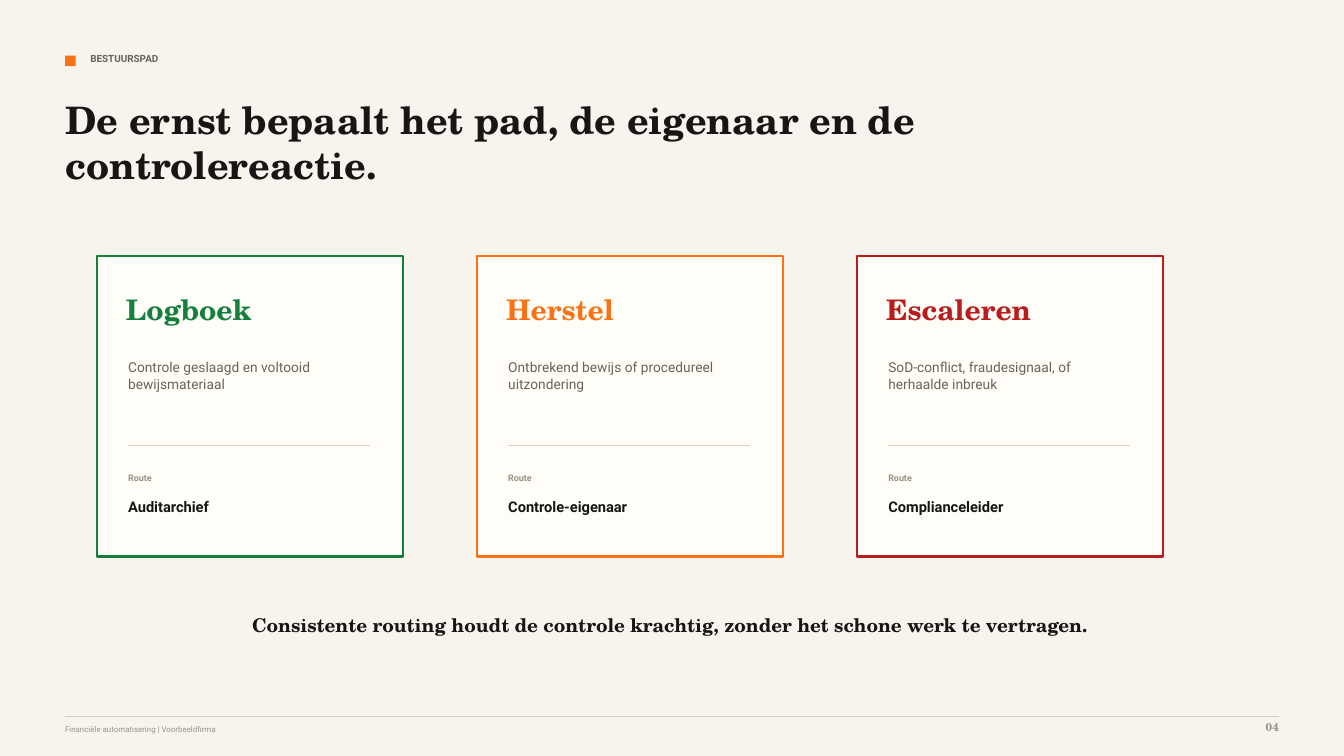
from dataclasses import dataclass

from pptx import Presentation
from pptx.dml.color import RGBColor
from pptx.enum.shapes import MSO_CONNECTOR, MSO_SHAPE
from pptx.enum.text import MSO_ANCHOR, MSO_AUTO_SIZE, PP_ALIGN
from pptx.oxml.ns import qn
from pptx.slide import Slide
from pptx.util import Emu, Pt
from lxml import etree

LEFT, CENTER, RIGHT = PP_ALIGN.LEFT, PP_ALIGN.CENTER, PP_ALIGN.RIGHT
TOP, NO_AUTOSIZE = MSO_ANCHOR.TOP, MSO_AUTO_SIZE.NONE
RECTANGLE, STRAIGHT = MSO_SHAPE.RECTANGLE, MSO_CONNECTOR.STRAIGHT
TITLE_ONLY = 5
EMU_PER_PX = 9525


@dataclass(frozen=True)
class Style:
    size: float
    font: str
    color: str
    bold: bool = True
    align: PP_ALIGN = LEFT


@dataclass(frozen=True)
class Theme:
    serif: str = "TeX Gyre Schola"
    sans: str = "Roboto"
    paper: str = "F7F4EE"
    card: str = "FFFDF8"
    ink: str = "171614"
    muted: str = "69635A"
    faint: str = "9A9184"
    rule: str = "D9D0C3"
    green: str = "15803D"
    orange: str = "F97316"
    red: str = "B91C1C"
    eyebrow_size: float = 7.1
    title_size: float = 27
    heading_size: float = 20.2
    body_size: float = 9.8
    label_size: float = 6.4
    route_size: float = 10.5
    takeaway_size: float = 13.5
    footer_size: float = 5.6
    page_size: float = 8.2


@dataclass(frozen=True)
class Box:
    left: int
    top: int
    width: int
    height: int

    def emu(self) -> tuple[Emu, Emu, Emu, Emu]:
        return px(self.left), px(self.top), px(self.width), px(self.height)


@dataclass(frozen=True)
class SeverityPath:
    heading: str
    condition: str
    route: str
    color: str


THEME = Theme()
EYEBROW = Style(THEME.eyebrow_size, THEME.sans, THEME.muted)
TITLE = Style(THEME.title_size, THEME.serif, THEME.ink)
BODY = Style(THEME.body_size, THEME.sans, THEME.muted, bold=False)
LABEL = Style(THEME.label_size, THEME.sans, THEME.faint)
ROUTE = Style(THEME.route_size, THEME.sans, THEME.ink)
TAKEAWAY = Style(THEME.takeaway_size, THEME.serif, THEME.ink, align=CENTER)
FOOTER = Style(THEME.footer_size, THEME.sans, THEME.faint, bold=False)
PAGE = Style(THEME.page_size, THEME.serif, THEME.faint, align=RIGHT)

MARGIN = 62
CARD_LEFT, CARD_TOP, CARD_WIDTH, CARD_HEIGHT = 92, 244, 292, 286
CARD_STEP = 362
CARD_PADDING = 30

PATHS = (
    SeverityPath("Logboek", "Controle geslaagd en voltooid\nbewijsmateriaal",
                 "Auditarchief", THEME.green),
    SeverityPath("Herstel", "Ontbrekend bewijs of procedureel\nuitzondering",
                 "Controle-eigenaar", THEME.orange),
    SeverityPath("Escaleren", "SoD-conflict, fraudesignaal, of\nherhaalde inbreuk",
                 "Complianceleider", THEME.red),
)


def px(length: int) -> Emu:
    return Emu(length * EMU_PER_PX)


def rgb(color: str) -> RGBColor:
    return RGBColor.from_string(color)


def write(shape, text: str, style: Style) -> None:
    frame = shape.text_frame
    frame_format = {
        "margin_left": 0, "margin_top": 0, "margin_right": 0, "margin_bottom": 0,
        "word_wrap": True, "auto_size": NO_AUTOSIZE, "vertical_anchor": TOP,
    }
    for name, value in frame_format.items():
        setattr(frame, name, value)
    frame.text = text
    font_format = {"size": Pt(style.size), "name": style.font, "bold": style.bold}
    for paragraph in frame.paragraphs:
        paragraph.alignment = style.align
        for run in paragraph.runs:
            for name, value in font_format.items():
                setattr(run.font, name, value)
            run.font.color.rgb = rgb(style.color)


def add_text(slide: Slide, box: Box, text: str, style: Style) -> None:
    write(slide.shapes.add_textbox(*box.emu()), text, style)


def add_title(slide: Slide, box: Box, text: str) -> None:
    title = slide.shapes.title
    title.left, title.top, title.width, title.height = box.emu()
    write(title, text, TITLE)


def add_block(slide: Slide, box: Box, fill: str, outline: str = "") -> None:
    block = slide.shapes.add_shape(RECTANGLE, *box.emu())
    block.shadow.inherit = False
    block.fill.solid()
    block.fill.fore_color.rgb = rgb(fill)
    if outline:
        block.line.color.rgb = rgb(outline)
        block.line.width = Pt(1.5)
    else:
        block.line.fill.background()


def add_rule(slide: Slide, left: int, top: int, width: int) -> None:
    rule = slide.shapes.add_connector(
        STRAIGHT, px(left), px(top), px(left + width), px(top))
    rule.line.color.rgb = rgb(THEME.rule)
    rule.line.width = Pt(0.75)
    etree.SubElement(rule._element.spPr, qn("a:effectLst"))


def add_card(slide: Slide, left: int, path: SeverityPath) -> None:
    inner = left + CARD_PADDING
    heading = Style(THEME.heading_size, THEME.serif, path.color)
    add_block(slide, Box(left, CARD_TOP, CARD_WIDTH, CARD_HEIGHT), THEME.card, path.color)
    add_text(slide, Box(inner - 2, 278, 220, 34), path.heading, heading)
    add_text(slide, Box(inner, 342, 224, 50), path.condition, BODY)
    add_rule(slide, inner, 424, 230)
    add_text(slide, Box(inner, 450, 160, 14), "Route", LABEL)
    add_text(slide, Box(inner, 474, 220, 22), path.route, ROUTE)


def main() -> None:
    deck = Presentation()
    deck.slide_width, deck.slide_height = px(1280), px(720)
    slide = deck.slides.add_slide(deck.slide_layouts[TITLE_ONLY])
    slide.background.fill.solid()
    slide.background.fill.fore_color.rgb = rgb(THEME.paper)

    # Header
    add_block(slide, Box(MARGIN, 53, 10, 10), THEME.orange)
    add_text(slide, Box(86, 50, 560, 18), "BESTUURSPAD", EYEBROW)
    add_title(slide, Box(MARGIN, 92, 900, 98),
              "De ernst bepaalt het pad, de eigenaar en de controlereactie.")

    # Severity cards
    for index, path in enumerate(PATHS):
        add_card(slide, CARD_LEFT + index * CARD_STEP, path)

    # Takeaway
    add_text(slide, Box(178, 584, 920, 28),
             "Consistente routing houdt de controle krachtig, "
             "zonder het schone werk te vertragen.", TAKEAWAY)

    # Footer
    add_rule(slide, MARGIN, 682, 1156)
    add_text(slide, Box(MARGIN, 690, 760, 14),
             "Financiële automatisering | Voorbeeldfirma", FOOTER)
    add_text(slide, Box(1170, 686, 48, 18), "04", PAGE)

    deck.save("out.pptx")


if __name__ == "__main__":
    main()
